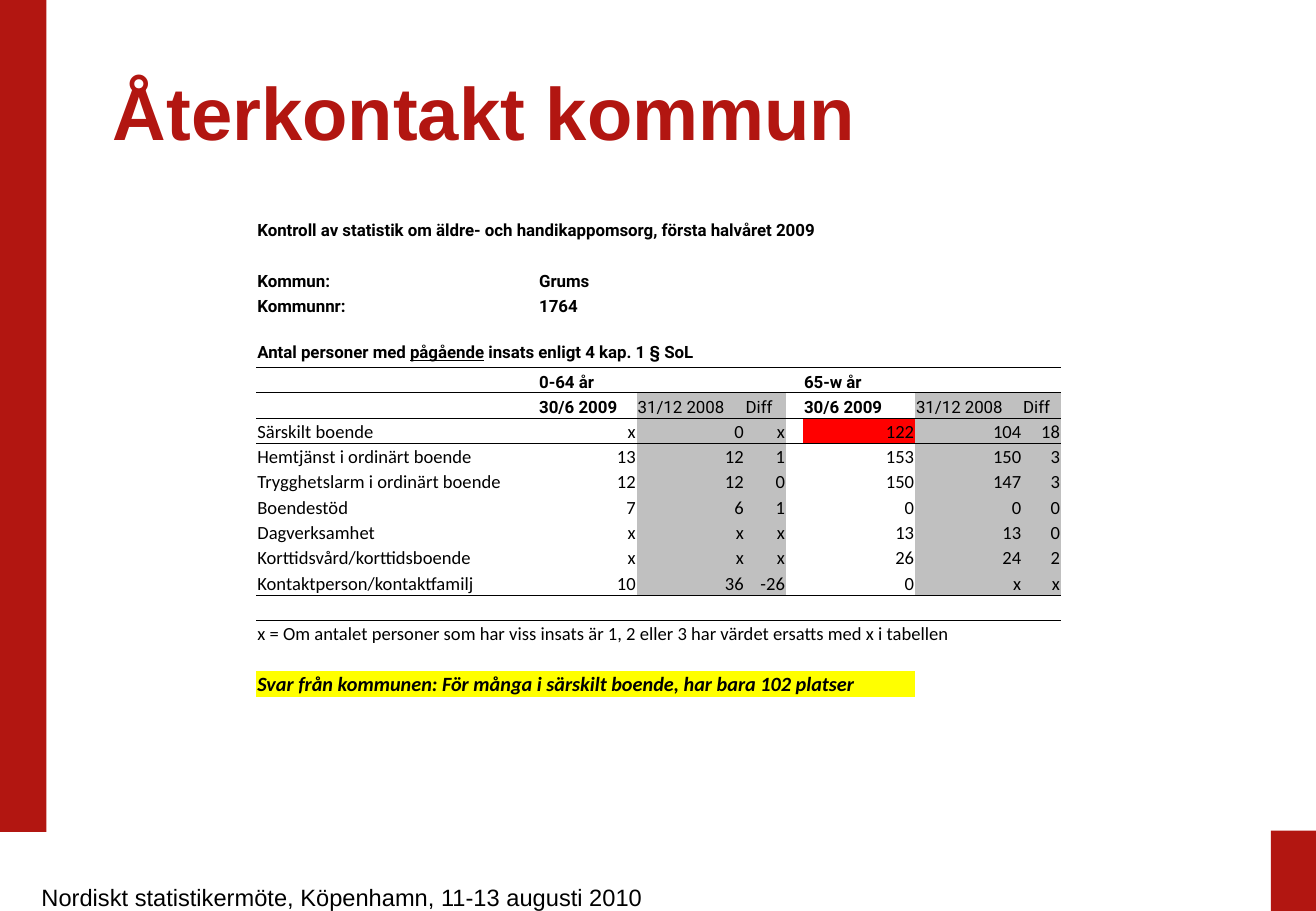
"""Build the slide with the municipal follow-up table."""
from dataclasses import dataclass

from lxml.etree import SubElement
from pptx import Presentation
from pptx.dml.color import RGBColor
from pptx.enum.shapes import MSO_SHAPE
from pptx.enum.text import MSO_ANCHOR, PP_ALIGN
from pptx.oxml.ns import qn
from pptx.slide import Slide
from pptx.table import Table, _Cell
from pptx.util import Cm, Pt

BRAND_RED = RGBColor(0xB2, 0x16, 0x11)
BLACK = RGBColor(0, 0, 0)
GREY = RGBColor(0xC0, 0xC0, 0xC0)
ALERT_RED = RGBColor(0xFF, 0, 0)
YELLOW = RGBColor(0xFF, 0xFF, 0)
NO_TABLE_STYLE = "{2D5ABB26-0587-4C30-8999-92F81FD0307C}"

COLUMN_WIDTHS = (5.89, 2.06, 2.26, 0.86, 0.36, 2.34, 2.24, 0.81)
ROW_COUNT = 19
ROW_HEIGHT = 0.53
SECTION_ROW, AGE_ROW, DATE_ROW, FIRST_DATA_ROW = 5, 6, 7, 8
DATA = (
    ("Särskilt boende", "x", "0", "x", "", "122", "104", "18"),
    ("Hemtjänst i ordinärt boende", "13", "12", "1", "", "153", "150", "3"),
    ("Trygghetslarm i ordinärt boende", "12", "12", "0", "", "150", "147", "3"),
    ("Boendestöd", "7", "6", "1", "", "0", "0", "0"),
    ("Dagverksamhet", "x", "x", "x", "", "13", "13", "0"),
    ("Korttidsvård/korttidsboende", "x", "x", "x", "", "26", "24", "2"),
    ("Kontaktperson/kontaktfamilj", "10", "36", "-26", "", "0", "x", "x"),
)
LAST_DATA_ROW = FIRST_DATA_ROW + len(DATA) - 1
GREY_COLUMNS = (2, 3, 6, 7)
RULED_ROWS = {SECTION_ROW: 0, AGE_ROW: 1, DATE_ROW: 0, LAST_DATA_ROW: 0}


@dataclass(frozen=True)
class TextStyle:
    """Font and alignment of a text."""
    font: str
    size: float
    bold: bool = False
    italic: bool = False
    color: RGBColor = BLACK
    align: PP_ALIGN = PP_ALIGN.LEFT


HEADING = TextStyle("Roboto", 10, bold=True)
PREVIOUS = TextStyle("Roboto", 10)
BODY = TextStyle("Calibri", 11)
NUMBER = TextStyle("Calibri", 11, align=PP_ALIGN.RIGHT)
ANSWER = TextStyle("Calibri", 12, bold=True, italic=True)
TITLE = TextStyle("Arial", 44, bold=True, color=BRAND_RED)
FOOTER = TextStyle("Arial", 14, align=PP_ALIGN.RIGHT)


@dataclass(frozen=True)
class Box:
    """Place on the slide in centimetres."""
    left: float
    top: float
    width: float
    height: float

    def lengths(self) -> tuple[Cm, Cm, Cm, Cm]:
        """Return the place as lengths."""
        return Cm(self.left), Cm(self.top), Cm(self.width), Cm(self.height)


@dataclass(frozen=True)
class Entry:
    """Text in a table cell, with bars around an underlined part."""
    row: int
    column: int
    text: str
    style: TextStyle = HEADING
    span: int = 1


@dataclass(frozen=True)
class Label:
    """Text box on the slide."""
    box: Box
    text: str
    style: TextStyle
    anchor: MSO_ANCHOR
    line_spacing: float


BARS = (Box(0, 0, 0.97, 17.4), Box(26.57, 17.37, 0.94, 1.68))
LABELS = (
    Label(Box(0, 18.34, 13.69, 0.71), "Nordiskt statistikermöte, Köpenhamn, 11-13 augusti 2010",
          FOOTER, MSO_ANCHOR.TOP, 1),
    Label(Box(2.11, 0.84, 23.39, 3.18), "Återkontakt kommun", TITLE, MSO_ANCHOR.MIDDLE, 0.9),
)
ENTRIES = [
    Entry(0, 0, "Kontroll av statistik om äldre- och handikappomsorg, första halvåret 2009", span=7),
    Entry(2, 0, "Kommun:"),
    Entry(2, 1, "Grums"),
    Entry(3, 0, "Kommunnr:"),
    Entry(3, 1, "1764"),
    Entry(SECTION_ROW, 0, "Antal personer med |pågående| insats enligt 4 kap. 1 § SoL", span=6),
    Entry(16, 0, "x = Om antalet personer som har viss insats är 1, 2 eller 3 "
          "har värdet ersatts med x i tabellen", BODY, 8),
    Entry(18, 0, "Svar från kommunen: För många i särskilt boende, har bara 102 platser", ANSWER, 6),
]
for start, age_group in ((1, "0-64 år"), (5, "65-w år")):
    ENTRIES += [
        Entry(AGE_ROW, start, age_group, span=3),
        Entry(DATE_ROW, start, "30/6 2009"),
        Entry(DATE_ROW, start + 1, "31/12 2008", PREVIOUS),
        Entry(DATE_ROW, start + 2, "Diff", PREVIOUS),
    ]
ENTRIES += [
    Entry(row, column, text, NUMBER if column else BODY)
    for row, values in enumerate(DATA, FIRST_DATA_ROW)
    for column, text in enumerate(values) if text
]


def write_text(paragraph, text: str, style: TextStyle) -> None:
    """Fill a paragraph with styled runs."""
    paragraph.alignment = style.align
    for index, part in enumerate(text.split("|")):
        run = paragraph.add_run()
        run.text = part
        font = run.font
        font.name, font.size = style.font, Pt(style.size)
        font.bold, font.italic = style.bold, style.italic
        font.color.rgb = style.color
        if index == 1:
            font.underline = True


def add_bar(slide: Slide, box: Box) -> None:
    """Draw a red bar."""
    shape = slide.shapes.add_shape(MSO_SHAPE.RECTANGLE, *box.lengths())
    shape.shadow.inherit = False
    shape.fill.solid()
    shape.fill.fore_color.rgb = BRAND_RED
    shape.line.fill.background()


def add_label(slide: Slide, label: Label) -> None:
    """Draw a text box."""
    text_frame = slide.shapes.add_textbox(*label.box.lengths()).text_frame
    text_frame.word_wrap = True
    text_frame.vertical_anchor = label.anchor
    paragraph = text_frame.paragraphs[0]
    paragraph.line_spacing = label.line_spacing
    write_text(paragraph, label.text, label.style)


def add_rule(cell: _Cell, side: str) -> None:
    """Give one side of a cell a thin black border."""
    line = SubElement(cell._tc.get_or_add_tcPr(), qn(f"a:{side}"), w=str(Pt(0.5)))
    SubElement(SubElement(line, qn("a:solidFill")), qn("a:srgbClr"), val=str(BLACK))


def cell_fill(row: int, column: int) -> RGBColor | None:
    """Return the fill colour of a cell."""
    if (row, column) == (FIRST_DATA_ROW, 5):
        return ALERT_RED
    if row == ROW_COUNT - 1 and column < 6:
        return YELLOW
    if DATE_ROW <= row <= LAST_DATA_ROW and column in GREY_COLUMNS:
        return GREY
    return None


def format_cell(table: Table, row: int, column: int) -> None:
    """Set margins, borders and fill of a cell."""
    cell = table.cell(row, column)
    cell.margin_left = cell.margin_right = cell.margin_top = Cm(0.02)
    cell.margin_bottom = 0
    cell.vertical_anchor = MSO_ANCHOR.TOP if row == SECTION_ROW else MSO_ANCHOR.BOTTOM
    for side, ruled_row in (("lnT", row - 1), ("lnB", row)):
        if column >= RULED_ROWS.get(ruled_row, len(COLUMN_WIDTHS)):
            add_rule(cell, side)
    color = cell_fill(row, column)
    if color is None:
        cell.fill.background()
    else:
        cell.fill.solid()
        cell.fill.fore_color.rgb = color
    SubElement(cell.text_frame.paragraphs[0]._p, qn("a:endParaRPr"), sz="1000")


def add_statistics(slide: Slide) -> None:
    """Draw the statistics table."""
    box = Box(5.36, 4.5, sum(COLUMN_WIDTHS), ROW_COUNT * ROW_HEIGHT)
    table = slide.shapes.add_table(ROW_COUNT, len(COLUMN_WIDTHS), *box.lengths()).table
    table.first_row = table.horz_banding = False
    table._tbl.tblPr.find(qn("a:tableStyleId")).text = NO_TABLE_STYLE
    for column, width in enumerate(COLUMN_WIDTHS):
        table.columns[column].width = Cm(width)
    for row in range(ROW_COUNT):
        table.rows[row].height = Cm(ROW_HEIGHT)
        for column in range(len(COLUMN_WIDTHS)):
            format_cell(table, row, column)
    for entry in ENTRIES:
        cell = table.cell(entry.row, entry.column)
        if entry.span > 1:
            cell.merge(table.cell(entry.row, entry.column + entry.span - 1))
        write_text(cell.text_frame.paragraphs[0], entry.text, entry.style)


def main() -> None:
    """Build and save the presentation."""
    presentation = Presentation()
    presentation.slide_width, presentation.slide_height = Cm(27.51), Cm(19.05)
    slide = presentation.slides.add_slide(presentation.slide_layouts[6])
    for bar in BARS:
        add_bar(slide, bar)
    add_statistics(slide)
    for label in LABELS:
        add_label(slide, label)
    presentation.save("out.pptx")


if __name__ == "__main__":
    main()
